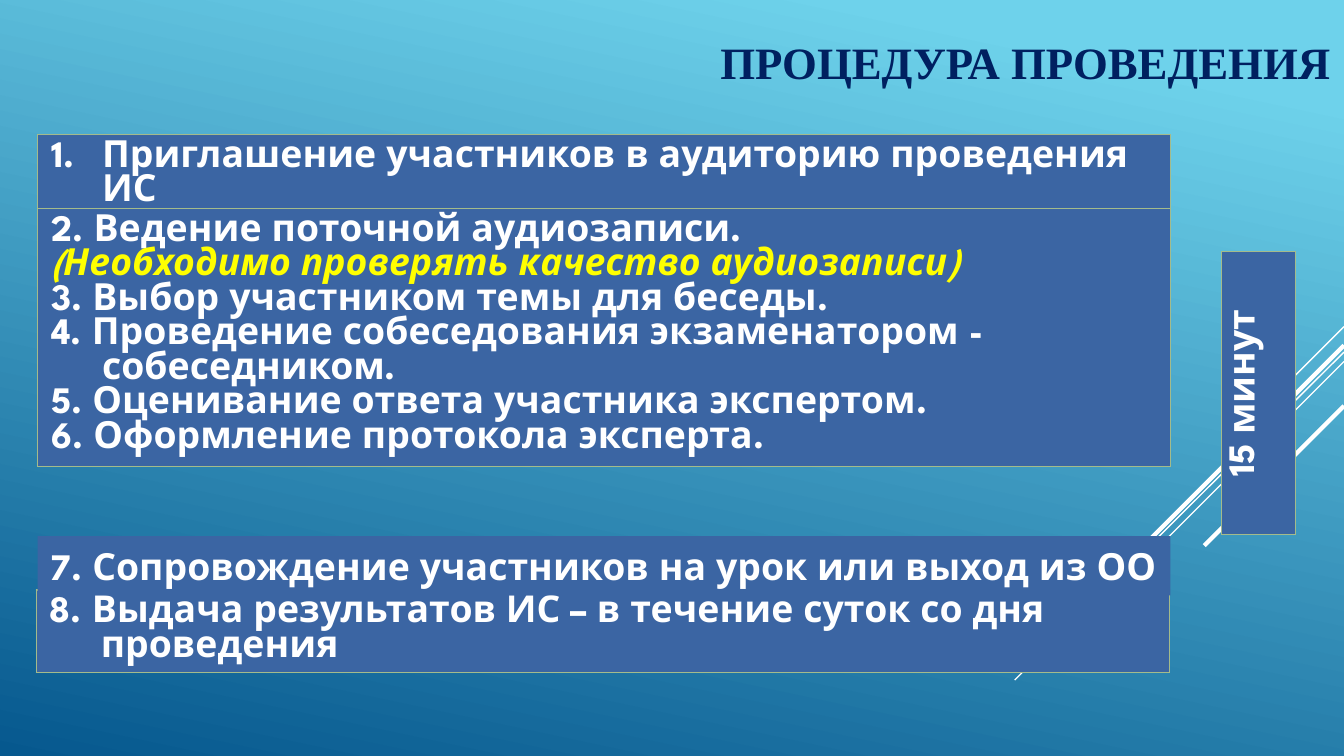
from lxml import etree
from pptx import Presentation
from pptx import util as u
from pptx.dml.color import RGBColor
from pptx.enum import shapes, text
from pptx.oxml import ns

COLORS = {
    "sky": "6ED2EB", "deep": "06588E", "white": "FFFFFF", "navy": "002060",
    "panel": "3B65A3", "border": "A4BB8B", "yellow": "FFFF00",
}
BODY_FONT = "League Spartan"
HANGING = u.Inches(0.38)

# Decorative diagonals: start x, start y, end x, end y, width in points
DIAGONALS = [
    (10, 2.43, 9.25, 3.18, 0.75),
    (10, 2.62, 7.55, 5.06, 0.75),
    (10, 2.69, 8.44, 4.25, 0.75),
    (10, 2.57, 8.57, 4, 2.25),
    (10, 3.02, 8.96, 4.06, 2.25),
]
RECORDING_NOTE = "(Необходимо проверять качество аудиозаписи)"
INTERVIEW_STEPS = [
    "2. Ведение поточной аудиозаписи.",
    RECORDING_NOTE,
    "3. Выбор участником темы для беседы.",
    "4. Проведение собеседования экзаменатором - собеседником.",
    "5. Оценивание ответа участника экспертом.",
    "6. Оформление протокола эксперта.",
]


def color(name):
    return RGBColor.from_string(COLORS[name])


def add_xml(parent, tag, **attributes):
    return etree.SubElement(parent, ns.qn(tag), attributes)


def format_runs(paragraph, font_name, size, color_name):
    for run in paragraph.runs:
        run.font.name = font_name
        run.font.size = u.Pt(size)
        run.font.bold = True
        run.font.color.rgb = color(color_name)


def write_steps(text_frame, steps):
    text_frame.text = "\n".join(steps)
    for paragraph in text_frame.paragraphs:
        is_note = paragraph.text == RECORDING_NOTE
        format_runs(paragraph, BODY_FONT, 20, "yellow" if is_note else "white")
        for run in paragraph.runs:
            run.font.italic = is_note
        properties = paragraph._p.get_or_add_pPr()
        properties.set("marL", str(HANGING))
        properties.set("indent", str(-HANGING))


def set_borders(cell):
    properties = cell._tc.get_or_add_tcPr()
    for index, side in enumerate(("a:lnL", "a:lnR", "a:lnT", "a:lnB")):
        line = etree.Element(ns.qn(side), {"w": str(u.Pt(0.75))})
        fill = add_xml(line, "a:solidFill")
        shade = add_xml(fill, "a:srgbClr", val=COLORS["border"])
        add_xml(shade, "a:alpha", val="60000")
        properties.insert(index, line)


def add_panel(slide, left, top, width, height, steps):
    """Add a one-cell table and return its cell."""
    frame = slide.shapes.add_table(1, 1, *map(u.Inches, (left, top, width, height)))
    cell = frame.table.cell(0, 0)
    cell.fill.solid()
    cell.fill.fore_color.rgb = color("panel")
    set_borders(cell)
    write_steps(cell.text_frame, steps)
    return cell


def add_band(slide, left, top, width, height, steps):
    shape = slide.shapes.add_shape(
        shapes.MSO_SHAPE.RECTANGLE, *map(u.Inches, (left, top, width, height)))
    shape.shadow.inherit = False
    shape.fill.solid()
    shape.fill.fore_color.rgb = color("panel")
    shape.line.fill.background()
    write_steps(shape.text_frame, steps)
    shape.text_frame.word_wrap = True
    shape.text_frame.auto_size = text.MSO_AUTO_SIZE.SHAPE_TO_FIT_TEXT
    shape.text_frame.vertical_anchor = text.MSO_ANCHOR.MIDDLE
    shape.text_frame.paragraphs[0].alignment = text.PP_ALIGN.LEFT


def add_diagonal(slide, start_x, start_y, end_x, end_y, width):
    connector = slide.shapes.add_connector(
        shapes.MSO_CONNECTOR.STRAIGHT, *map(u.Inches, (start_x, start_y, end_x, end_y)))
    connector.line.color.rgb = color("white")
    connector.line.width = u.Pt(width)
    add_xml(connector._element.spPr, "a:effectLst")


def set_background(slide):
    fill = slide.background.fill
    fill.gradient()
    fill.gradient_angle = 258
    for stop, (position, name) in zip(fill.gradient_stops, ((0.1, "sky"), (1, "deep"))):
        stop.position = position
        stop.color.rgb = color(name)


def set_title(slide, title_text):
    title = slide.shapes.title
    title.left, title.top, title.width, title.height = map(u.Inches, (2.24, 0.06, 7.76, 0.79))
    title.text_frame.text = title_text
    title.text_frame.vertical_anchor = text.MSO_ANCHOR.MIDDLE
    paragraph = title.text_frame.paragraphs[0]
    paragraph.alignment = text.PP_ALIGN.RIGHT
    format_runs(paragraph, "Times New Roman", 24, "navy")


def main():
    # Widescreen format, 16:9
    presentation = Presentation()
    presentation.slide_width = u.Inches(10)
    presentation.slide_height = u.Inches(10 * 9 / 16)
    slide = presentation.slides.add_slide(presentation.slide_layouts[5])

    # Backdrop and title
    set_background(slide)
    for diagonal in DIAGONALS:
        add_diagonal(slide, *diagonal)
    set_title(slide, "ПРОЦЕДУРА ПРОВЕДЕНИЯ")

    # Invitation, with automatic numbering
    invitation = add_panel(slide, 0.28, 1, 8.43, 0.55,
                           ["Приглашение участников в аудиторию проведения ИС"])
    properties = invitation.text_frame.paragraphs[0]._p.get_or_add_pPr()
    add_xml(properties, "a:buFont", typeface="+mj-lt")
    add_xml(properties, "a:buAutoNum", type="arabicPeriod")

    # Interview and its duration
    add_panel(slide, 0.28, 1.55, 8.43, 1.92, INTERVIEW_STEPS)
    duration = add_panel(slide, 9.09, 1.87, 0.55, 2.1, ["15 минут"])
    duration._tc.get_or_add_tcPr().set("vert", "vert270")
    duration.text_frame.paragraphs[0].alignment = text.PP_ALIGN.CENTER

    # Closing steps
    add_panel(slide, 0.27, 4.39, 8.43, 0.61,
              ["8. Выдача результатов ИС – в течение суток со дня проведения"])
    add_band(slide, 0.28, 3.99, 8.43, 0.44,
             ["7. Сопровождение участников на урок или выход из ОО"])

    presentation.save("out.pptx")


if __name__ == "__main__":
    main()
